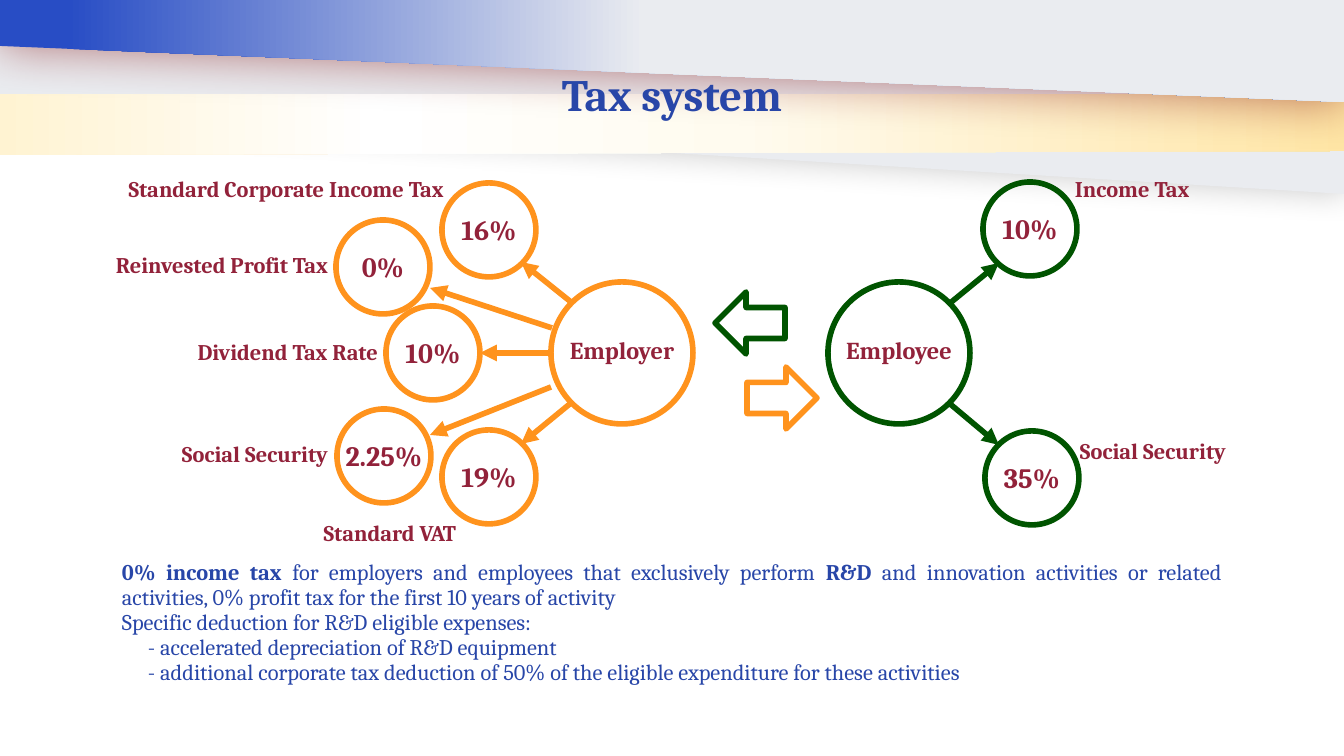
from lxml import etree
from pptx import Presentation
from pptx.dml.color import RGBColor
from pptx.enum import shapes, text
from pptx.oxml import ns
from pptx.util import Emu, Pt

SCALE = 914400 / 134.4
WIDE, HIGH = 1344, 756
FONT = "Cambria"
BLUE, WINE, GOLD, GREEN = "2846A8", "92223A", "FF931D", "005400"
LEFT, MID, RIGHT, JUST = (text.PP_ALIGN.LEFT, text.PP_ALIGN.CENTER,
                          text.PP_ALIGN.RIGHT, text.PP_ALIGN.JUSTIFY)


def px(n):
    return Emu(round(n * SCALE))


def hue(code):
    return RGBColor.from_string(code)


def sub(node, tag, **attrs):
    return etree.SubElement(node, ns.qn(tag), attrs)


class Deck:
    def __init__(self):
        self.file = Presentation()
        self.file.slide_width, self.file.slide_height = px(WIDE), px(HIGH)
        self.slide = self.file.slides.add_slide(self.file.slide_layouts[5])
        self.items = self.slide.shapes

    def style(self, para, size, color, align, bold=None):
        para.alignment = align
        font = para.font
        font.name, font.size, font.bold = FONT, Pt(size), bold
        font.color.rgb = hue(color)

    def band(self, points, stops, shade=None):
        build = self.items.build_freeform(*points[0], scale=SCALE)
        build.add_line_segments(points[1:])
        shape = build.convert_to_shape()
        shape.line.fill.background()
        shape.shadow.inherit = False
        shape.fill.gradient()
        shape.fill.gradient_angle = 0
        grad = shape._element.spPr.find(ns.qn("a:gradFill"))
        stack = grad.find(ns.qn("a:gsLst"))
        for stop in list(stack):
            stack.remove(stop)
        for pos, color in stops:
            stop = sub(stack, "a:gs", pos=str(pos * 1000))
            sub(stop, "a:srgbClr", val=color)
        if shade:
            color, alpha, blur = shade
            fx = shape._element.spPr.find(ns.qn("a:effectLst"))
            cast = sub(fx, "a:outerShdw", blurRad=str(Pt(blur)), dist="0",
                       algn="ctr", rotWithShape="0")
            tint = sub(cast, "a:srgbClr", val=color)
            sub(tint, "a:alpha", val=str(alpha * 1000))

    def title(self, words):
        box = self.items.title
        self.items._spTree.append(box._element)
        box.left, box.top, box.width, box.height = px(0), px(62), px(WIDE), px(58)
        frame = box.text_frame
        frame.text = words
        frame.auto_size = text.MSO_AUTO_SIZE.NONE
        frame.vertical_anchor = text.MSO_ANCHOR.BOTTOM
        frame.margin_left = frame.margin_right = 0
        frame.margin_top = frame.margin_bottom = 0
        self.style(frame.paragraphs[0], 24, BLUE, MID, True)

    def frame(self, x, y, w, h, side=13):
        box = self.items.add_textbox(px(x), px(y), px(w), px(h))
        frame = box.text_frame
        frame.word_wrap = True
        frame.margin_left = frame.margin_right = px(side)
        return frame

    def label(self, words, x, y, w, h=40, size=12, align=MID, side=16):
        frame = self.frame(x, y, w, h, side)
        frame.text = words
        self.style(frame.paragraphs[0], size, WINE, align, True)

    def body(self, x, y, w, h, rows):
        frame = self.frame(x, y, w, h)
        for i, (runs, deep) in enumerate(rows):
            para = frame.add_paragraph() if i else frame.paragraphs[0]
            if deep:
                para.level = 1
                para._p.get_or_add_pPr().set("marL", str(px(26)))
            para.line_spacing = 0.93
            self.style(para, 12, BLUE, JUST)
            for words, bold in runs:
                run = para.add_run()
                run.text = words
                run.font.bold = bold

    def shape(self, kind, x, y, w, h, color, fill=None, turn=0):
        shape = self.items.add_shape(kind, px(x), px(y), px(w), px(h))
        shape.shadow.inherit = False
        shape.rotation = turn
        if fill:
            shape.fill.solid()
            shape.fill.fore_color.rgb = hue(fill)
        else:
            shape.fill.background()
        shape.line.color.rgb = hue(color)
        shape.line.width = Pt(3)

    def ring(self, words, x, y, color, size=94, wide=134, points=15):
        self.shape(shapes.MSO_SHAPE.OVAL, x - size / 2, y - size / 2,
                   size, size, color)
        self.label(words, x - wide / 2, y - 24, wide, 46, points, side=13)

    def arrow(self, x1, y1, x2, y2, color):
        line = self.items.add_connector(shapes.MSO_CONNECTOR.STRAIGHT,
                                        px(x1), px(y1), px(x2), px(y2))
        line.line.color.rgb = hue(color)
        line.line.width = Pt(3)
        sub(line.line._get_or_add_ln(), "a:tailEnd", type="triangle")
        sub(line._element.spPr, "a:effectLst")


def main():
    deck = Deck()
    deck.band([(0, 17), (WIDE, 99), (WIDE, 194), (0, 112)],
              [(0, "EAECF0"), (100, "EAECF0")], ("000000", 20, 17))
    deck.band([(0, 94), (WIDE, 94), (WIDE, 151), (0, 155)],
              [(0, "FFF3D2"), (28, "FFFFFF"), (55, "FFFBEF"), (100, "FFE5A5")])
    deck.band([(0, 0), (WIDE, 0), (WIDE, 102), (0, 46)],
              [(0, "284DC5"), (5, "284DC5"), (48, "EAECF0"), (100, "EAECF0")],
              ("7E0808", 50, 25))
    deck.title("Tax system")

    deck.body(109, 554, 1126, 140, [
        ([("0% income tax ", True),
          ("for employers and employees that exclusively perform ", False),
          ("R&D", True),
          (" and innovation activities or related activities, "
           "0% profit tax for the first 10 years of activity", False)], False),
        ([("Specific deduction for R&D eligible expenses:", False)], False),
        ([("- accelerated depreciation of R&D equipment", False)], True),
        ([("- additional corporate tax deduction of 50% of the eligible "
           "expenditure for these activities", False)], True),
    ])

    for words, x, y, color in [
            ("16%", 489, 230, GOLD), ("0%", 383, 267, GOLD),
            ("10%", 433, 353, GOLD), ("2.25%", 384, 456, GOLD),
            ("19%", 489, 477, GOLD), ("10%", 1030, 229, GREEN),
            ("35%", 1032, 478, GREEN)]:
        deck.ring(words, x, y, color)
    for words, x, color in [("Employer", 622, GOLD), ("Employee", 899, GREEN)]:
        deck.ring(words, x, 353, color, 142, 144, 13)

    for words, x, y, w, align in [
            ("Standard Corporate Income Tax", 93, 169, 367, RIGHT),
            ("Reinvested Profit Tax", 77, 245, 267, RIGHT),
            ("Dividend Tax Rate", 164, 332, 230, RIGHT),
            ("Social Security", 161, 434, 188, MID),
            ("Standard VAT", 302, 513, 176, MID),
            ("Income Tax", 1059, 169, 234, LEFT),
            ("Social Security", 1064, 431, 270, LEFT)]:
        deck.label(words, x, y, w, align=align)

    for x1, y1, x2, y2, color in [
            (571, 302, 521, 262, GOLD), (552, 328, 430, 288, GOLD),
            (551, 353, 480, 353, GOLD), (551, 387, 430, 435, GOLD),
            (571, 403, 521, 444, GOLD), (949, 304, 999, 263, GREEN),
            (949, 403, 999, 445, GREEN)]:
        deck.arrow(x1, y1, x2, y2, color)

    for x, y, color, turn in [(747, 367, GOLD, 0), (715, 292, GREEN, 180)]:
        deck.shape(shapes.MSO_SHAPE.RIGHT_ARROW, x, y, 70, 62, color,
                   "FFFFFF", turn)
    deck.file.save("out.pptx")


if __name__ == "__main__":
    main()
